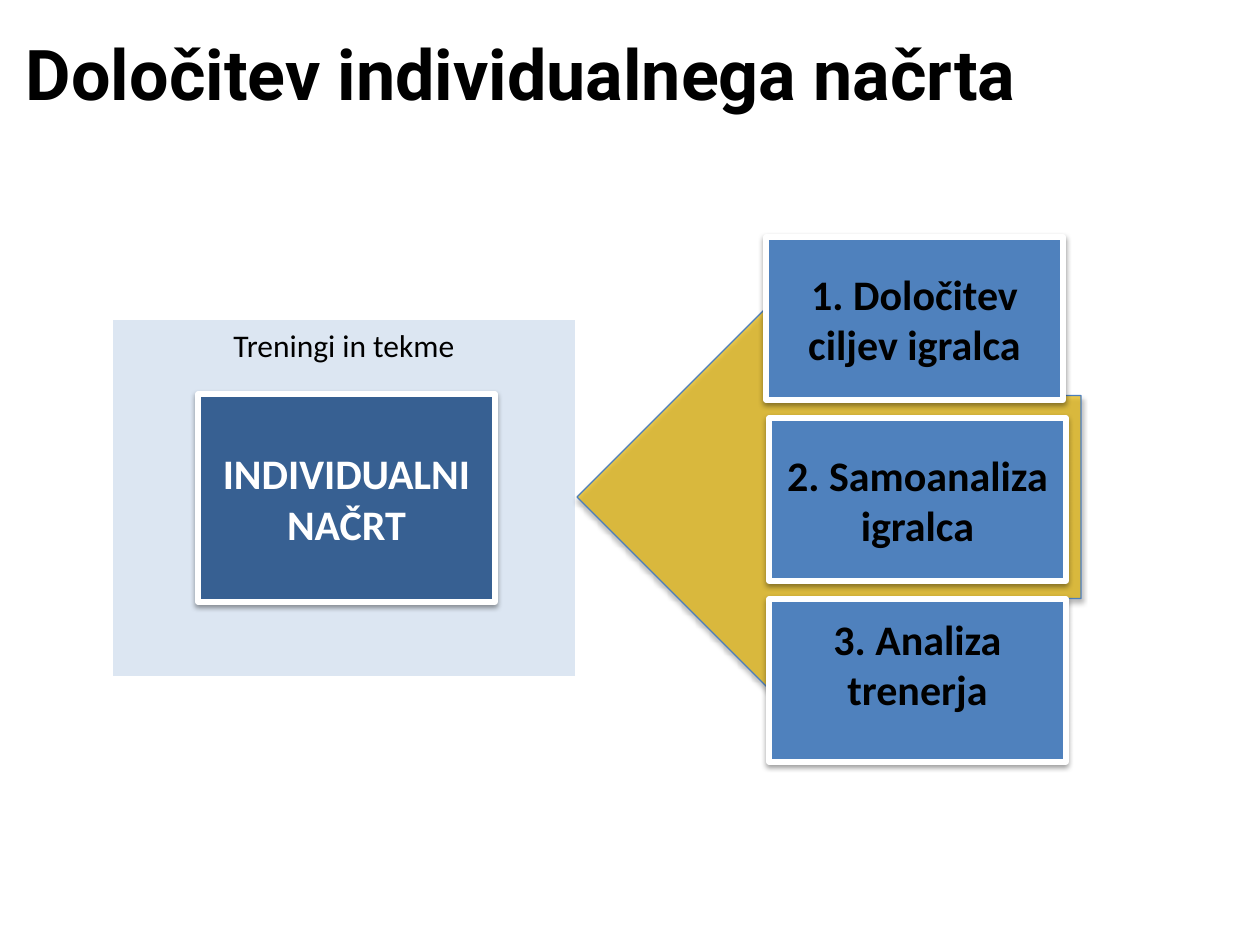
from lxml import etree
from pptx import Presentation
from pptx.dml.color import RGBColor
from pptx.enum.shapes import MSO_SHAPE
from pptx.enum.text import MSO_ANCHOR, MSO_AUTO_SIZE, PP_ALIGN
from pptx.oxml.ns import qn
from pptx.util import Emu, Pt

RECT, ARROW = MSO_SHAPE.RECTANGLE, MSO_SHAPE.LEFT_ARROW
TOP, MID = MSO_ANCHOR.TOP, MSO_ANCHOR.MIDDLE
LEFT, CENTER = PP_ALIGN.LEFT, PP_ALIGN.CENTER
FIXED = MSO_AUTO_SIZE.NONE
SCALE = 914400 / 126
TITLE_ONLY = 5


def px(size):
    return Emu(round(size * SCALE))


def rgb(code):
    return RGBColor.from_string(code)


def assign(target, values):
    for name, value in values.items():
        setattr(target, name, value)


class Deck:
    font = "Calibri"
    black, white = "000000", "FFFFFF"
    blue, navy = "4F81BD", "376092"
    pale, gold, edge = "DCE6F2", "E4B60C", "4B7EBC"

    def __init__(self, width, height):
        self.file = Presentation()
        assign(self.file, {"slide_width": px(width), "slide_height": px(height)})
        self.slide = self.file.slides.add_slide(self.file.slide_layouts[TITLE_ONLY])

    def label(self, shape, text, size, color, bold=False, font=None,
              anchor=MID, align=CENTER, inset=(13, 6, 13, 6)):
        frame = shape.text_frame
        left, top, right, bottom = map(px, inset)
        assign(frame, {
            "text": text, "word_wrap": True, "auto_size": FIXED,
            "vertical_anchor": anchor, "margin_left": left, "margin_top": top,
            "margin_right": right, "margin_bottom": bottom,
        })
        line = frame.paragraphs[0]
        line.alignment = align
        run = line.runs[0]
        assign(run.font, {"name": font or self.font, "size": Pt(size), "bold": bold})
        run.font.color.rgb = rgb(color)

    def title(self, text, box):
        shape = self.slide.shapes.title
        assign(shape, dict(zip(("left", "top", "width", "height"), map(px, box))))
        self.label(shape, text, 40, self.black, True, "Roboto",
                   align=LEFT, inset=(13, 10, 13, 18))

    def shape(self, kind, box, fill, line=None, weight=0):
        shape = self.slide.shapes.add_shape(kind, *map(px, box))
        shape.shadow.inherit = False
        shape.fill.solid()
        shape.fill.fore_color.rgb = rgb(fill)
        if line:
            shape.line.color.rgb = rgb(line)
            shape.line.width = Pt(weight)
        else:
            shape.line.fill.background()
        return shape

    def fade(self, color, share):
        etree.SubElement(color, qn("a:alpha"), val=str(share * 1000))

    def shade(self, shape, share, drop):
        effects = shape._element.spPr.find(qn("a:effectLst"))
        shadow = etree.SubElement(
            effects, qn("a:outerShdw"), blurRad=str(Pt(3.1)), dist=str(Pt(drop)),
            dir="5400000", rotWithShape="0")
        color = etree.SubElement(shadow, qn("a:srgbClr"), val=self.black)
        self.fade(color, share)

    def panel(self, text, box):
        shape = self.shape(RECT, box, self.pale)
        self.label(shape, text, 18, self.black, anchor=TOP)

    def arrow(self, box):
        shape = self.shape(ARROW, box, self.gold, self.edge, 0.75)
        self.fade(shape._element.spPr.find(qn("a:solidFill"))[0], 72)
        self.shade(shape, 35, 1.8)

    def card(self, text, box, fill, color, lift=0):
        shape = self.shape(RECT, box, fill, self.white, 3)
        self.shade(shape, 38, 1.6)
        self.label(shape, text, 24, color, True, inset=(13, 6, 13, 6 + lift))


def main():
    deck = Deck(1260, 945)
    deck.title("Določitev individualnega načrta", (13, 20, 1192, 113))
    deck.panel("Treningi in tekme", (113, 320, 462, 356))
    deck.arrow((577, 294, 504, 406))
    steps = (
        ("1. Določitev ciljev igralca", 766, 0),
        ("2. Samoanaliza igralca", 769, 0),
        ("3. Analiza trenerja", 769, 34),
    )
    for row, (text, left, lift) in enumerate(steps):
        deck.card(text, (left, 237 + 181 * row, 297, 163), deck.blue, deck.black, lift)
    deck.card("INDIVIDUALNI NAČRT", (198, 394, 297, 208), deck.navy, deck.white)
    deck.file.save("out.pptx")


if __name__ == "__main__":
    main()
